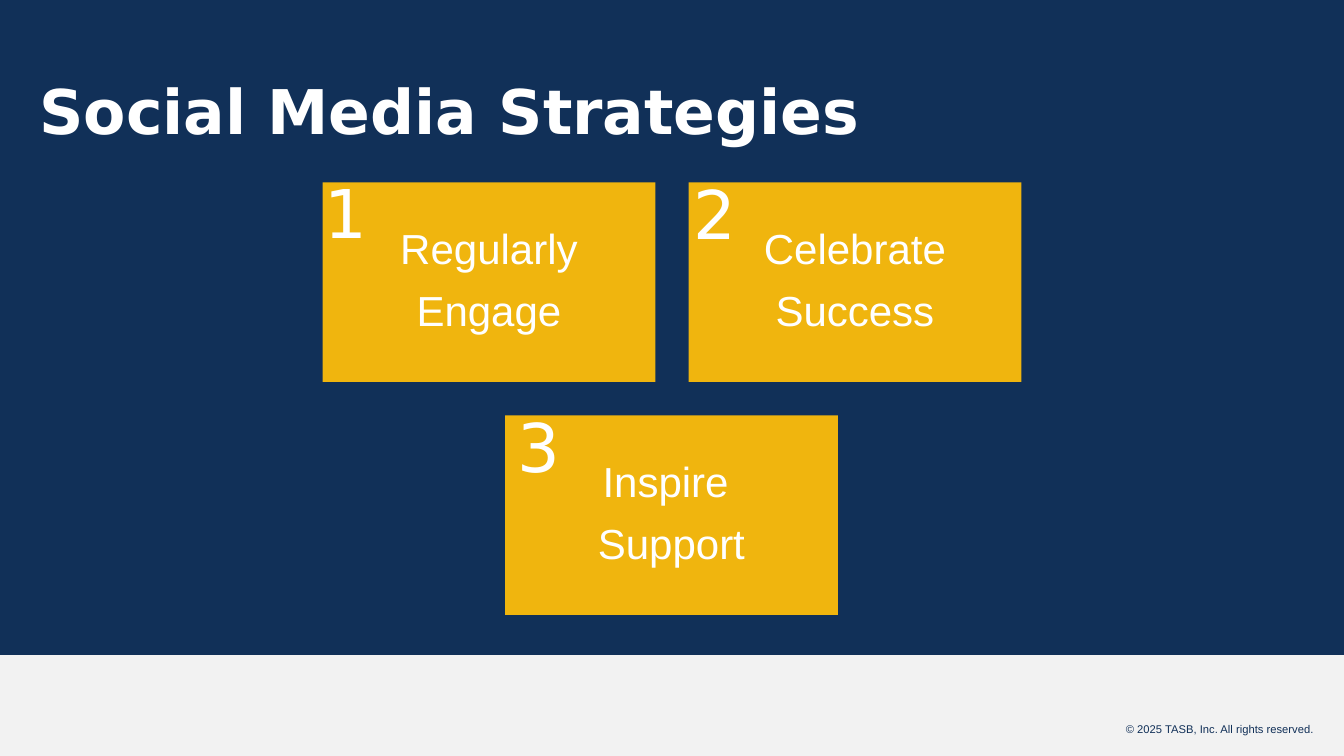
"""Build the Social Media Strategies slide."""
from pptx import Presentation
from pptx.dml.color import RGBColor
from pptx.enum.shapes import MSO_SHAPE
from pptx.enum.text import MSO_ANCHOR, MSO_AUTO_SIZE, PP_ALIGN
from pptx.util import Pt

PX = 9144
RECTANGLE = MSO_SHAPE.RECTANGLE
MIDDLE = MSO_ANCHOR.MIDDLE
NO_FIT, GROW = MSO_AUTO_SIZE.NONE, MSO_AUTO_SIZE.SHAPE_TO_FIT_TEXT
LEFT, CENTER, RIGHT = PP_ALIGN.LEFT, PP_ALIGN.CENTER, PP_ALIGN.RIGHT
COLORS = {"navy": "113058", "gold": "F0B50E", "pale": "F2F2F2", "white": "FFFFFF"}
BODY_FONT, DISPLAY_FONT = "Arial", "DejaVu Sans"
CARD_WIDTH, CARD_HEIGHT = 330, 198
STRATEGIES = [
    ("1", "Regularly\nEngage", (320, 181), (312, 165, 617, 91)),
    ("2", "Celebrate\nSuccess", (683, 181), (678, 166, 617, 91)),
    ("3", "Inspire \nSupport", (501, 412), (503, 397, 90, 91)),
]


def color(name):
    """Return a named colour."""
    return RGBColor.from_string(COLORS[name])


def scaled(*lengths):
    """Turn px lengths into EMU."""
    return [length * PX for length in lengths]


def write(frame, text, size, font, ink="white", align=LEFT, bold=False):
    """Fill a text frame and format its runs."""
    frame.text = text
    frame.word_wrap = True
    for para in frame.paragraphs:
        para.alignment = align
        for span in para.runs:
            span.font.size = Pt(size)
            span.font.name = font
            span.font.bold = bold
            span.font.color.rgb = color(ink)


def add_panel(page, place, fill):
    """Add a plain filled rectangle."""
    panel = page.shapes.add_shape(RECTANGLE, *scaled(*place))
    panel.shadow.inherit = False
    panel.fill.solid()
    panel.fill.fore_color.rgb = color(fill)
    panel.line.fill.background()
    return panel


def add_label(page, place, text, size, font, **style):
    """Add a text box that grows with its text."""
    box = page.shapes.add_textbox(*scaled(*place))
    write(box.text_frame, text, size, font, **style)
    box.text_frame.auto_size = GROW


def add_card(page, corner, text):
    """Add a gold card with centred lines."""
    card = add_panel(page, (*corner, CARD_WIDTH, CARD_HEIGHT), "gold")
    frame = card.text_frame
    write(frame, text, 30, BODY_FONT, align=CENTER)
    frame.vertical_anchor = MIDDLE
    frame.margin_left = frame.margin_right = 12 * PX
    frame.margin_top = frame.margin_bottom = 12 * PX
    for para in frame.paragraphs:
        para.line_spacing = 0.9
        para.space_after = Pt(12)


def set_title(page, place, text):
    """Place and format the title."""
    title = page.shapes.title
    title.left, title.top, title.width, title.height = scaled(*place)
    frame = title.text_frame
    write(frame, text, 44, DISPLAY_FONT, bold=True)
    frame.auto_size = NO_FIT
    frame.vertical_anchor = MIDDLE
    frame.paragraphs[0].line_spacing = 0.9


def main():
    """Build and save the deck."""
    deck = Presentation()
    deck.slide_width, deck.slide_height = scaled(1333, 750)
    page = deck.slides.add_slide(deck.slide_layouts[5])
    page.background.fill.solid()
    page.background.fill.fore_color.rgb = color("navy")
    add_panel(page, (0, 650, 1333, 100), "pale")
    add_label(page, (1013, 712, 300, 24), "© 2025 TASB, Inc. All rights reserved.",
              8, BODY_FONT, ink="navy", align=RIGHT)
    set_title(page, (29, 41, 1381, 145), "Social Media Strategies")
    for number, text, corner, number_place in STRATEGIES:
        add_card(page, corner, text)
        add_label(page, number_place, number, 48, DISPLAY_FONT)
    deck.save("out.pptx")


if __name__ == "__main__":
    main()
